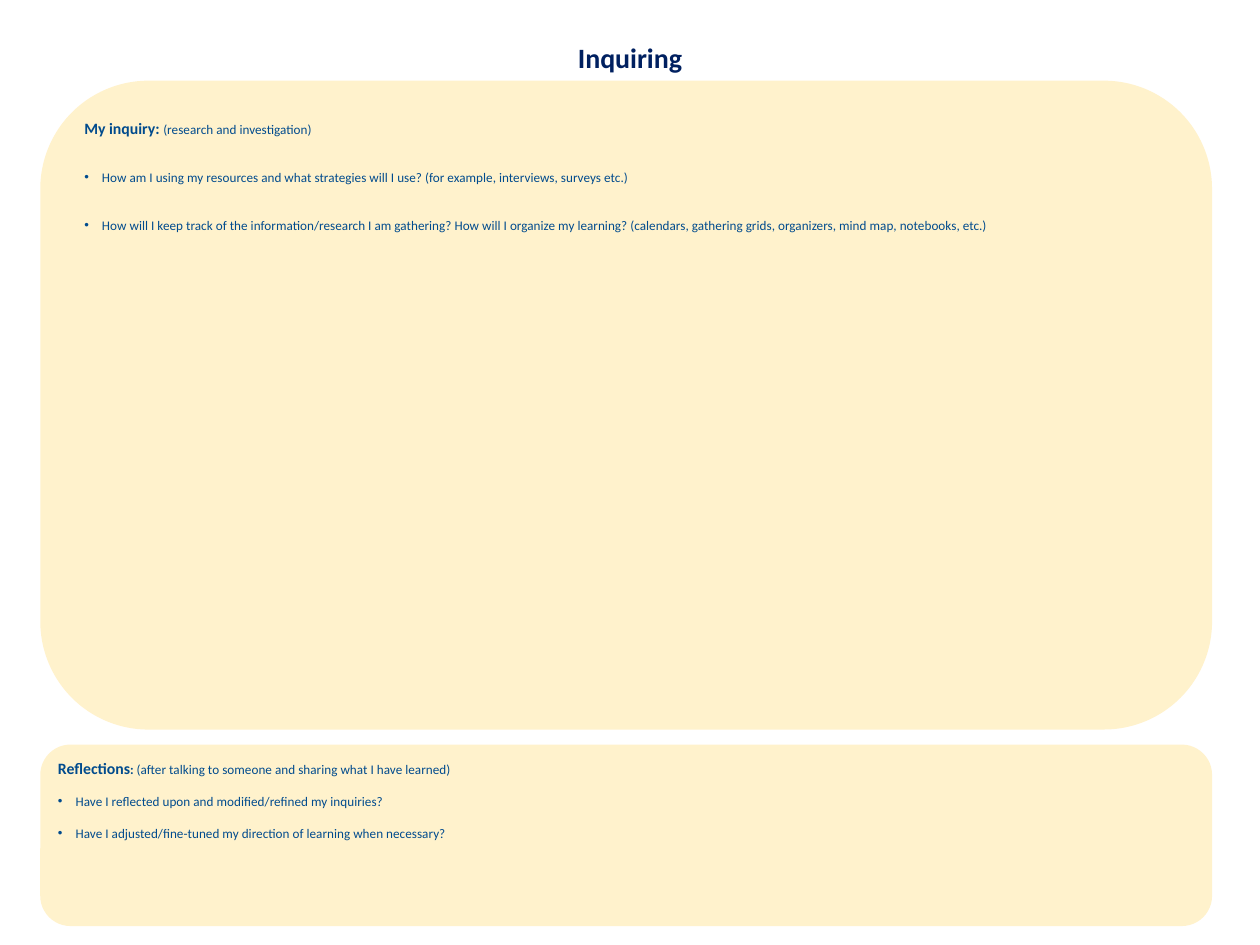
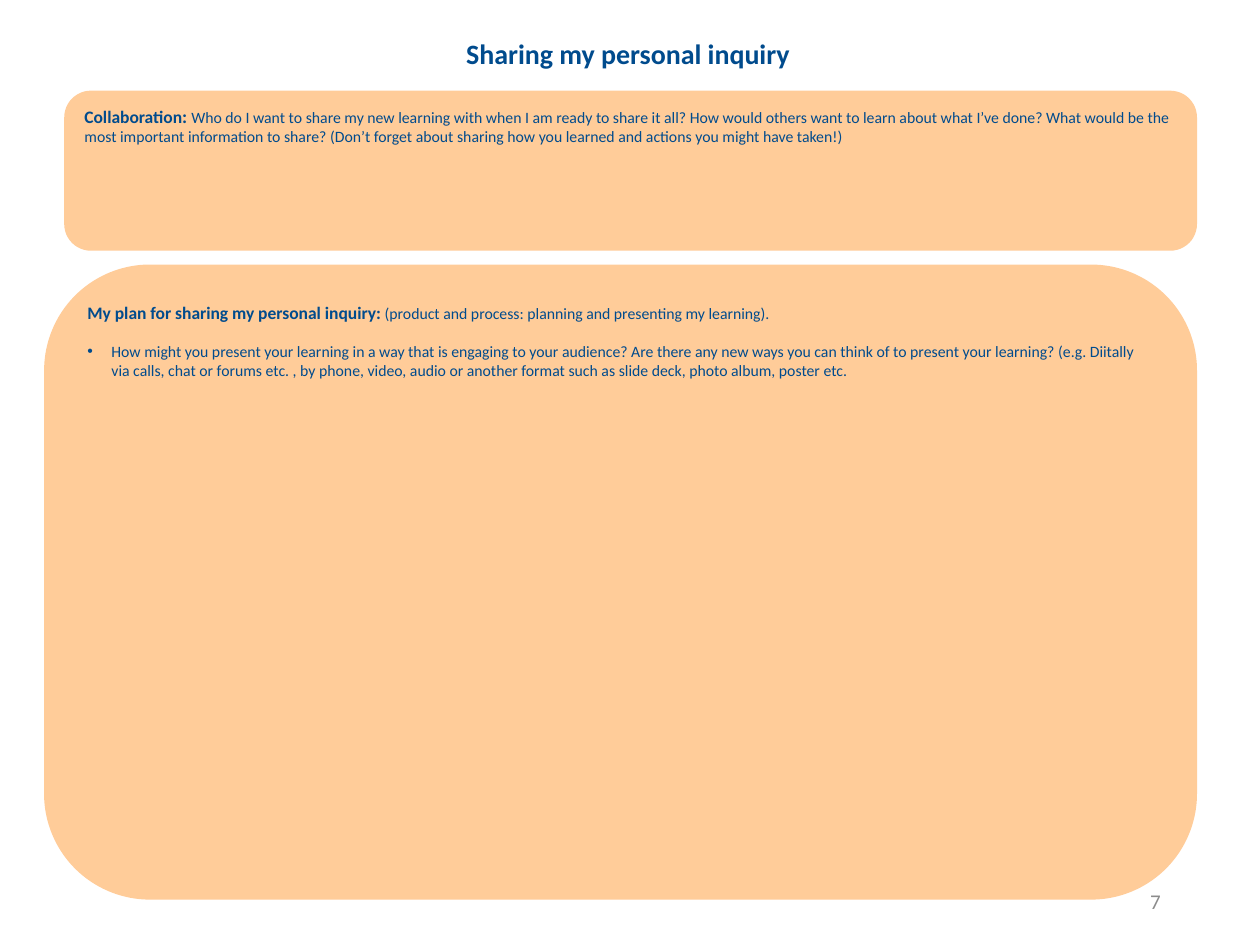
from lxml.etree import SubElement
from pptx import Presentation
from pptx.dml.color import RGBColor
from pptx.enum.shapes import MSO_SHAPE
from pptx.enum.text import MSO_ANCHOR as Anchor, MSO_AUTO_SIZE as AutoSize, PP_ALIGN as Align
from pptx.oxml.ns import qn
from pptx.util import Inches, Pt

# Shared look
FONT = "Calibri"
NAVY, BLUE, GREY = "002060", "004B8D", "8C8C8C"
CREAM, PEACH = "FFF2CC", "FFCC99"


def rgb(hex_code):
    return RGBColor.from_string(hex_code)


def add_run(paragraph, text, size, color=BLUE, bold=False):
    run = paragraph.add_run()
    run.text = text
    for name, value in {"name": FONT, "size": Pt(size), "bold": bold}.items():
        setattr(run.font, name, value)
    run.font.color.rgb = rgb(color)


# Content: panel heading runs are (text, size, bold)
pages = [
    {
        "title": "Inquiring", "title_at": (0, 0.27), "title_color": NAVY,
        "fill": CREAM, "size": 7.5, "indent": 0.14, "number": None,
        "panels": [
            {
                "at": (0.32, 0.64, 9.3, 5.15), "margins": (0.1, 0.05), "gap": 18.3,
                "heading": [("My inquiry: ", 9, True),
                            ("(research and investigation)", 7.5, False)],
                "questions": [
                    "How am I using my resources and what strategies will I use? "
                    "(for example, interviews, surveys etc.)",
                    "How will I keep track of the information/research I am gathering? "
                    "How will I organize my learning? (calendars, gathering grids, "
                    "organizers, mind map, notebooks, etc.)",
                ],
            },
            {
                "at": (0.32, 5.91, 9.3, 1.44), "margins": (0.07, 0.04), "gap": 9.15,
                "heading": [("Reflections", 9, True), (": ", 7.5, True),
                            ("(after talking to someone and sharing what I have learned)",
                             7.5, False)],
                "questions": [
                    "Have I reflected upon and modified/refined my inquiries?",
                    "Have I adjusted/fine-tuned my direction of learning when necessary?",
                ],
            },
        ],
    },
    {
        "title": "Sharing my personal inquiry ", "title_at": (0.01, 0.24), "title_color": BLUE,
        "fill": PEACH, "size": 9, "indent": 0.19, "number": "7",
        "panels": [
            {
                "at": (0.51, 0.72, 8.99, 1.27), "margins": (0.1, 0.05), "gap": 0,
                "heading": [("Collaboration", 10, True), (": ", 10.5, True),
                            ("Who do I want to share my new learning with when I am ready to "
                             "share it all? How would others want to learn about what I’ve "
                             "done? What would be the most important information to share? "
                             "(Don’t forget about sharing how you learned and actions you "
                             "might have taken!)", 9, False)],
                "questions": [],
            },
            {
                "at": (0.35, 2.1, 9.15, 5.04), "margins": (0.1, 0.05), "gap": 11,
                "heading": [("My plan for sharing my personal inquiry: ", 10, True),
                            ("(product and process: planning and presenting my learning).",
                             9, False)],
                "questions": [
                    "How might you present your learning in a way that is engaging to your "
                    "audience? Are there any new ways you can think of to present your "
                    "learning? (e.g. Diitally via calls, chat or forums etc. , by phone, "
                    "video, audio or another format such as slide deck, photo album, "
                    "poster etc.",
                ],
            },
        ],
    },
]

deck = Presentation()
deck.slide_width, deck.slide_height = Inches(10), Inches(7.5)
title_only = deck.slide_layouts[5]

for page in pages:
    slide = deck.slides.add_slide(title_only)

    # Title
    title = slide.shapes.title
    left, top = page["title_at"]
    title.left, title.top = Inches(left), Inches(top)
    title.width, title.height = Inches(10), Inches(0.37)
    for name, value in {"auto_size": AutoSize.NONE, "word_wrap": True,
                        "vertical_anchor": Anchor.TOP}.items():
        setattr(title.text_frame, name, value)
    title_line = title.text_frame.paragraphs[0]
    title_line.alignment = Align.CENTER
    add_run(title_line, page["title"], 16, page["title_color"], True)

    # Page number
    if page["number"]:
        number = slide.shapes.add_textbox(Inches(7.06), Inches(6.95), Inches(2.25), Inches(0.4))
        number.text_frame.word_wrap = True
        number.text_frame.vertical_anchor = Anchor.MIDDLE
        number_line = number.text_frame.paragraphs[0]
        number_line.alignment = Align.RIGHT
        add_run(number_line, page["number"], 12, GREY)

    # Rounded writing panels
    for panel in page["panels"]:
        area = slide.shapes.add_shape(MSO_SHAPE.ROUNDED_RECTANGLE, *map(Inches, panel["at"]))
        area.shadow.inherit = False
        area.fill.solid()
        area.fill.fore_color.rgb = rgb(page["fill"])
        area.line.fill.background()

        side, edge = map(Inches, panel["margins"])
        frame = area.text_frame
        for name, value in {"word_wrap": True, "vertical_anchor": Anchor.TOP,
                            "margin_left": side, "margin_right": side,
                            "margin_top": edge, "margin_bottom": edge}.items():
            setattr(frame, name, value)

        heading = frame.paragraphs[0]
        heading.alignment = Align.LEFT
        for text, size, bold in panel["heading"]:
            add_run(heading, text, size, bold=bold)

        # Bulleted questions
        for text in panel["questions"]:
            question = frame.add_paragraph()
            question.alignment = Align.LEFT
            question.space_before = Pt(panel["gap"])
            add_run(question, text, page["size"])
            props = question._p.get_or_add_pPr()
            indent = Inches(page["indent"])
            props.set("marL", str(indent))
            props.set("indent", str(-indent))
            SubElement(props, qn("a:buFont"), typeface="Arial")
            SubElement(props, qn("a:buChar"), char="•")

deck.save("out.pptx")
